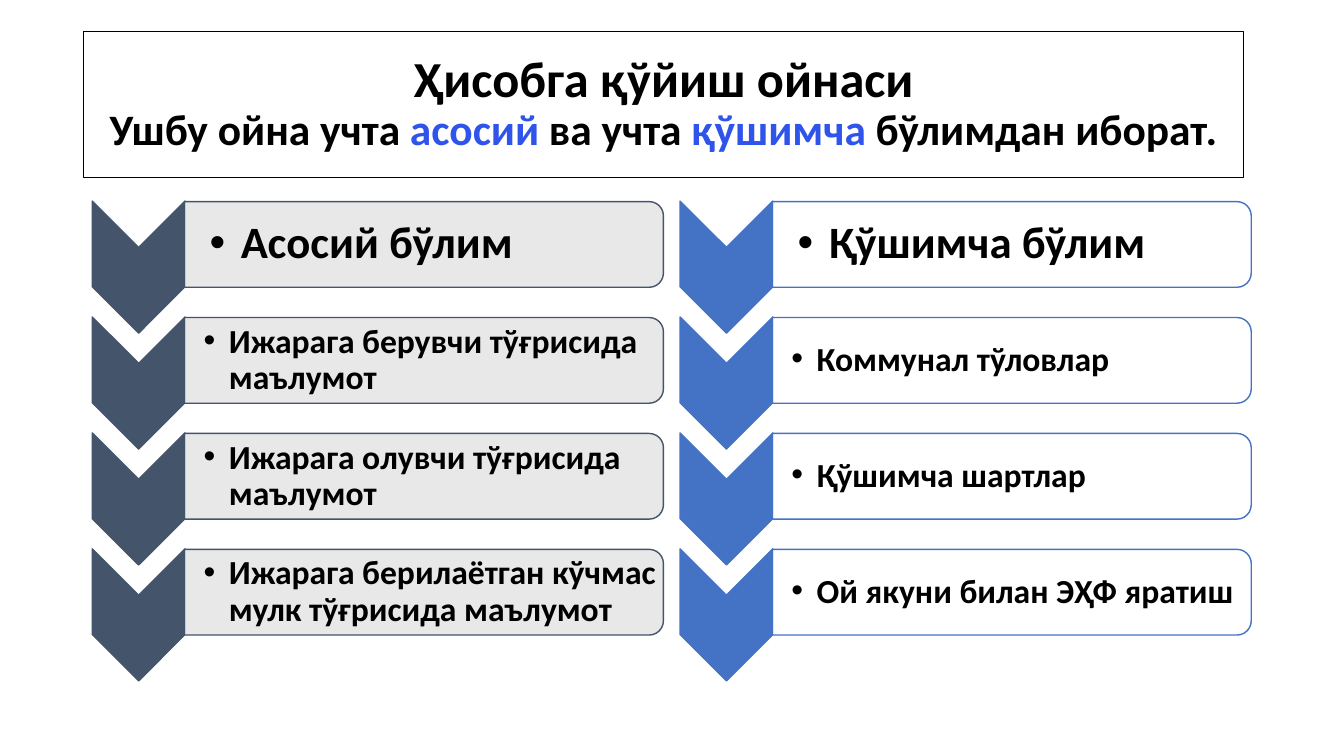
from lxml.etree import SubElement
from pptx import Presentation
from pptx.dml.color import RGBColor
from pptx.enum.shapes import MSO_SHAPE
from pptx.enum.text import MSO_ANCHOR, PP_ALIGN
from pptx.oxml.ns import qn
from pptx.util import Emu, Pt


def px(num):
    return Emu(num * 9144)


def tint(code):
    return RGBColor.from_string(code)


class Deck:
    """Holds the style and the current slide, and draws each kind of element."""

    font = "Calibri"
    ink = "000000"

    def __init__(self, wide, high):
        self.file = Presentation()
        self.file.slide_width, self.file.slide_height = px(wide), px(high)
        self.slide = self.file.slides.add_slide(self.file.slide_layouts[6])
        self.home = self.slide.shapes

    def group(self):
        self.home = self.slide.shapes.add_group_shape().shapes

    def shape(self, kind, box, fill, line, width=1, turn=0, alpha=100):
        form = self.home.add_shape(kind, *map(px, box))
        form.shadow.inherit = False
        form.rotation = turn
        form.fill.solid()
        form.fill.fore_color.rgb = tint(fill)
        if alpha < 100:
            color = form.fill._xPr.find(".//" + qn("a:srgbClr"))
            SubElement(color, qn("a:alpha"), val=str(alpha * 1000))
        form.line.color.rgb = tint(line)
        form.line.width = Pt(width)
        return form

    def label(self, box, words, **style):
        self.text(self.home.add_textbox(*map(px, box)), [[(words, self.ink)]], **style)

    def text(self, form, lines, sizes, align=PP_ALIGN.LEFT, pad=(10, 5, 5, 5), hang=0):
        frame = form.text_frame
        frame.word_wrap = True
        frame.vertical_anchor = MSO_ANCHOR.MIDDLE
        (frame.margin_left, frame.margin_top,
         frame.margin_right, frame.margin_bottom) = map(px, pad)
        para = frame.paragraphs[0]
        para.alignment, para.line_spacing = align, 0.9
        if hang:
            para.level = 1
            para.space_after = Pt(sizes[0] * 0.15)
            props = para._p.get_or_add_pPr()
            props.set("marL", str(px(hang)))
            props.set("indent", str(px(-hang)))
            SubElement(props, qn("a:buFont"), typeface="Arial")
            SubElement(props, qn("a:buChar"), char="•")
        for row, (runs, size) in enumerate(zip(lines, sizes)):
            if row:
                para.add_line_break()
            for words, color in runs:
                run = para.add_run()
                run.text = words
                run.font.name, run.font.size, run.font.bold = self.font, Pt(size), True
                run.font.color.rgb = tint(color)

    def step(self, left, top, words, dark, pale, head):
        self.shape(MSO_SHAPE.CHEVRON, (left, top + 20, 131, 92), dark, dark, turn=90)
        self.shape(MSO_SHAPE.ROUND_2_SAME_RECTANGLE, (left + 306, top - 194, 85, 475),
                   pale, dark, turn=90, alpha=90)
        size, hang, inset = (32, 31, 25) if head else (24, 25, 19)
        self.label((left + 111, top + 5, 471, 77), words, sizes=[size],
                   pad=(inset, 2, 2, 2), hang=hang)


def main():
    deck = Deck(1333, 750)
    ink, blue = deck.ink, "2F54EB"
    title = deck.shape(MSO_SHAPE.RECTANGLE, (83, 31, 1150, 145), "FFFFFF", ink, 0.75)
    deck.text(title, [
        [("Ҳисобга қўйиш ойнаси", ink)],
        [("Ушбу ойна учта ", ink), ("асосий", blue), (" ва учта ", ink),
         ("қўшимча", blue), (" бўлимдан иборат.", ink)],
    ], sizes=[36, 31], align=PP_ALIGN.CENTER, pad=(10, 5, 10, 5))

    parts = [
        ("44546A", "E7E6E6", [
            "Асосий бўлим",
            "Ижарага берувчи тўғрисида маълумот",
            "Ижарага олувчи тўғрисида маълумот",
            "Ижарага берилаётган кўчмас мулк тўғрисида маълумот"]),
        ("4472C4", "FFFFFF", [
            "Қўшимча бўлим",
            "Коммунал тўловлар",
            "Қўшимча шартлар",
            "Ой якуни билан ЭҲФ яратиш"]),
    ]
    for col, (dark, pale, steps) in enumerate(parts):
        deck.group()
        for row, words in enumerate(steps):
            deck.step(72 + 583 * col, 199 + 115 * row, words, dark, pale, row == 0)
    deck.file.save("out.pptx")


if __name__ == "__main__":
    main()
